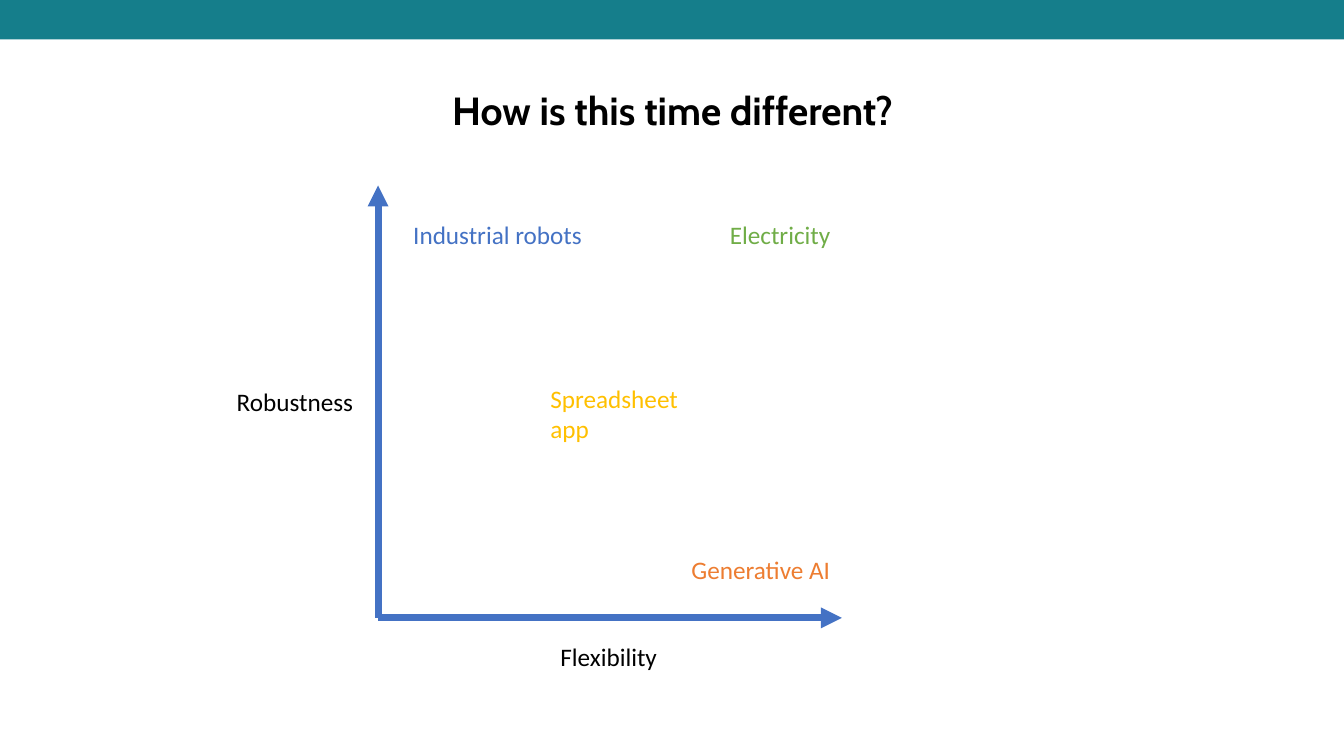
from lxml import etree
from pptx import Presentation
from pptx.dml.color import RGBColor
from pptx.enum.shapes import MSO_CONNECTOR, MSO_SHAPE
from pptx.enum.text import MSO_ANCHOR, MSO_AUTO_SIZE, PP_ALIGN
from pptx.oxml.ns import qn
from pptx.util import Inches, Pt

RECTANGLE = MSO_SHAPE.RECTANGLE
STRAIGHT = MSO_CONNECTOR.STRAIGHT
LEFT, CENTER = PP_ALIGN.LEFT, PP_ALIGN.CENTER
TOP, MIDDLE = MSO_ANCHOR.TOP, MSO_ANCHOR.MIDDLE
FIT_SHAPE, NO_FIT = MSO_AUTO_SIZE.SHAPE_TO_FIT_TEXT, MSO_AUTO_SIZE.NONE

COLORS = {
    "teal": "157E8B",
    "black": "000000",
    "blue": "4472C4",
    "orange": "ED7D31",
    "gold": "FFC000",
    "green": "70AD47",
}
SLIDE_WIDTH, SLIDE_HEIGHT = 13.33, 7.5
BANNER_HEIGHT = 0.39
LABEL_HEIGHT = 0.4
ORIGIN = (3.75, 6.13)
ROBUSTNESS_END = (3.75, 1.84)
FLEXIBILITY_END = (8.35, 6.13)

# text, left, top, width, color
LABELS = [
    ("Flexibility", 5.46, 6.31, 1.17, "black"),
    ("Robustness", 2.25, 3.78, 1.37, "black"),
    ("Industrial robots", 4, 2.13, 1.89, "blue"),
    ("Generative AI", 6.76, 5.45, 1.59, "orange"),
    ("Spreadsheet app", 5.36, 3.75, 1.81, "gold"),
    ("Electricity", 7.14, 2.13, 1.21, "green"),
]


def rgb(name):
    return RGBColor.from_string(COLORS[name])


def write_text(frame, text, *, font="Calibri", size=18, color="black",
               bold=False, align=LEFT, line_spacing=None):
    paragraph = frame.paragraphs[0]
    paragraph.alignment = align
    paragraph.line_spacing = line_spacing
    run = paragraph.add_run()
    run.text = text
    run.font.name = font
    run.font.size = Pt(size)
    run.font.bold = bold
    run.font.color.rgb = rgb(color)


class SlideBuilder:
    def __init__(self, slide):
        self.shapes = slide.shapes

    def banner(self, width, height, color):
        banner = self.shapes.add_shape(RECTANGLE, 0, 0, Inches(width), Inches(height))
        banner.shadow.inherit = False
        banner.fill.solid()
        banner.fill.fore_color.rgb = rgb(color)
        banner.line.fill.background()

    def text(self, text, left, top, width, height, *, wrap=False,
             anchor=TOP, fit=FIT_SHAPE, **text_format):
        frame = self.shapes.add_textbox(
            Inches(left), Inches(top), Inches(width), Inches(height)).text_frame
        frame.word_wrap = wrap
        frame.auto_size = fit
        frame.vertical_anchor = anchor
        write_text(frame, text, **text_format)

    def arrow(self, start, end, color, width):
        arrow = self.shapes.add_connector(
            STRAIGHT, *(Inches(value) for value in (*start, *end)))
        arrow.line.color.rgb = rgb(color)
        arrow.line.width = Pt(width)
        etree.SubElement(arrow.line._get_or_add_ln(), qn("a:tailEnd"), type="triangle")
        etree.SubElement(arrow._element.spPr, qn("a:effectLst"))


def main():
    presentation = Presentation()
    presentation.slide_width = Inches(SLIDE_WIDTH)
    presentation.slide_height = Inches(SLIDE_HEIGHT)
    builder = SlideBuilder(presentation.slides.add_slide(presentation.slide_layouts[6]))

    builder.text("How is this time different?", 0.92, BANNER_HEIGHT, 11.5, 1.45,
                 wrap=True, anchor=MIDDLE, fit=NO_FIT, font="Cabin", size=28,
                 bold=True, align=CENTER, line_spacing=0.9)
    builder.banner(SLIDE_WIDTH, BANNER_HEIGHT, "teal")
    for axis_end in (ROBUSTNESS_END, FLEXIBILITY_END):
        builder.arrow(ORIGIN, axis_end, "blue", 5)
    for label, left, top, width, color in LABELS:
        builder.text(label, left, top, width, LABEL_HEIGHT, color=color)

    presentation.save("out.pptx")


if __name__ == "__main__":
    main()
